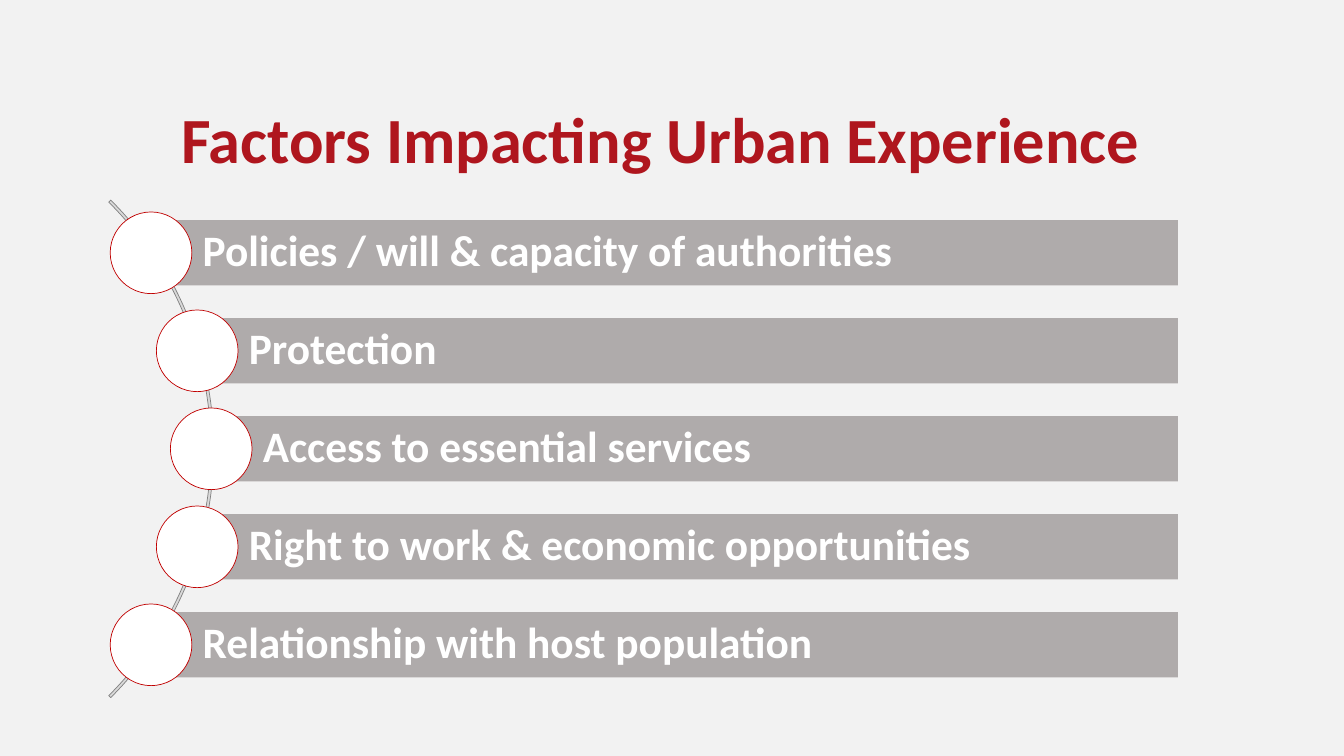
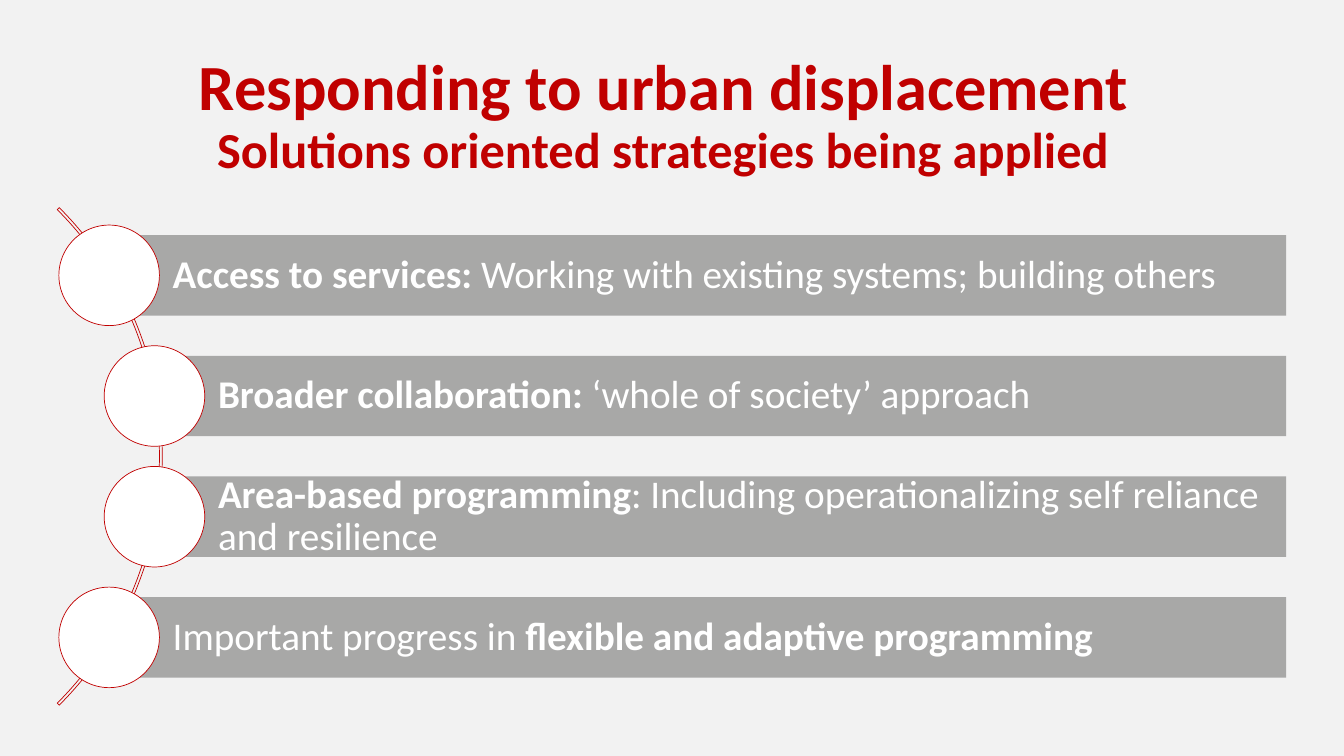
import math

import pptx
import pptx.dml.color
import pptx.enum.shapes
import pptx.enum.text
import pptx.util

Pt = pptx.util.Pt
SHAPE = pptx.enum.shapes.MSO_SHAPE
ALIGN = pptx.enum.text.PP_ALIGN
MIDDLE = pptx.enum.text.MSO_ANCHOR.MIDDLE

# Shared style
FONT = "Calibri"
PAPER, WHITE, RED = "F2F2F2", "FFFFFF", "C00000"
ARC_SIZE = 502.6
ARC_RADIUS = 249.5  # radius on which the circle centres lie


def color(hex_code):
    return pptx.dml.color.RGBColor.from_string(hex_code)


def add_shape(s, kind, x, y, w, h, fill=None, line=None):
    sp = s.shapes.add_shape(kind, Pt(x), Pt(y), Pt(w), Pt(h))
    sp.shadow.inherit = False
    if fill:
        sp.fill.solid()
        sp.fill.fore_color.rgb = color(fill)
    else:
        sp.fill.background()
    if line:
        sp.line.color.rgb = color(line)
        sp.line.width = Pt(0.5)
    else:
        sp.line.fill.background()
    return sp


# Content: titles are (text, size), rows are lists of (text, bold) runs
slides = [
    dict(
        title=[("Factors Impacting Urban Experience", 46)],
        title_color="AF161E", title_x=33.1, title_y=74.9,
        arc_x=-98.6, arc_fill="D9D9D9", arc_line="808080",
        center_y=320.6, pitch=70, right=841.4,
        bar_fill="AFABAB", size=31, inset=6.5,
        rows=[
            [("Policies / will & capacity of authorities", True)],
            [("Protection", True)],
            [("Access to essential services", True)],
            [("Right to work & economic opportunities", True)],
            [("Relationship with host population", True)],
        ],
    ),
    dict(
        title=[("Responding to urban displacement", 46),
               ("Solutions oriented strategies being applied", 36)],
        title_color=RED, title_x=35.3, title_y=56.9,
        arc_x=-135.4, arc_fill=None, arc_line=RED,
        center_y=326, pitch=86.2, right=918.7,
        bar_fill="A8A8A7", size=28, inset=5.8,
        rows=[
            [("Access to services: ", True),
             ("Working with existing systems; building others", False)],
            [("Broader collaboration: ", True),
             ("‘whole of society’ approach", False)],
            [("Area-based programming", True),
             (": Including operationalizing self reliance and resilience", False)],
            [("Important progress in ", False),
             ("flexible and adaptive programming", True)],
        ],
    ),
]

prs = pptx.Presentation()
prs.slide_width, prs.slide_height = Pt(960), Pt(540)

for d in slides:
    s = prs.slides.add_slide(prs.slide_layouts[6])
    s.background.fill.solid()
    s.background.fill.fore_color.rgb = color(PAPER)

    # Title
    sp = s.shapes.add_textbox(Pt(d["title_x"]), Pt(d["title_y"]), Pt(877), Pt(53.3))
    tf = sp.text_frame
    tf.word_wrap = True
    tf.vertical_anchor = MIDDLE
    for i, (text, size) in enumerate(d["title"]):
        p = tf.add_paragraph() if i else tf.paragraphs[0]
        p.text = text
        p.alignment = ALIGN.CENTER
        p.line_spacing = 0.9
        p.font.name, p.font.size, p.font.bold = FONT, Pt(size), True
        p.font.color.rgb = color(d["title_color"])

    # Arc behind the rows, from 315 to 45 degrees
    sp = add_shape(s, SHAPE.BLOCK_ARC, d["arc_x"] - ARC_SIZE / 2,
                   d["center_y"] - ARC_SIZE / 2, ARC_SIZE, ARC_SIZE,
                   d["arc_fill"], d["arc_line"])
    for i, value in enumerate((189, 27, 0.004)):
        sp.adjustments[i] = value

    # Rows: a bar that starts at the centre of a circle on the arc
    bar_h = d["pitch"] * 2 / 3
    circle = bar_h * 1.25
    for i, runs in enumerate(d["rows"]):
        dy = (i - (len(d["rows"]) - 1) / 2) * d["pitch"]
        x = d["arc_x"] + math.sqrt(ARC_RADIUS ** 2 - dy ** 2)
        y = d["center_y"] + dy

        sp = add_shape(s, SHAPE.RECTANGLE, x, y - bar_h / 2,
                       d["right"] - x, bar_h, d["bar_fill"])
        tf = sp.text_frame
        tf.word_wrap = True
        tf.vertical_anchor = MIDDLE
        tf.margin_left = Pt(bar_h * 0.79)
        tf.margin_right = tf.margin_top = tf.margin_bottom = Pt(d["inset"])
        p = tf.paragraphs[0]
        p.alignment = ALIGN.LEFT
        p.line_spacing = 0.9
        p.font.name, p.font.size = FONT, Pt(d["size"])
        p.font.color.rgb = color(WHITE)
        for text, bold in runs:
            r = p.add_run()
            r.text = text
            r.font.bold = bold

        add_shape(s, SHAPE.OVAL, x - circle / 2, y - circle / 2,
                  circle, circle, WHITE, RED)

prs.save("out.pptx")
